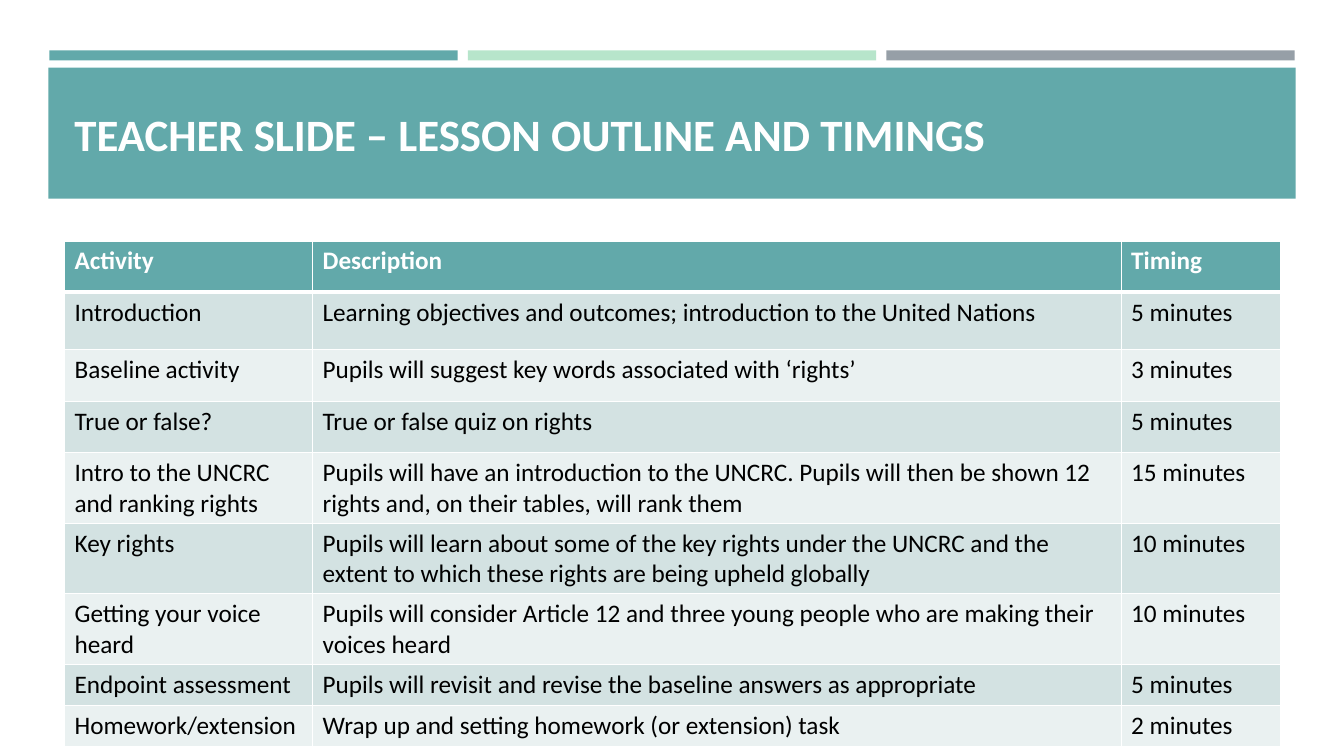
import pptx
import pptx.util
import pptx.dml.color
import pptx.enum.shapes
import pptx.enum.text
import pptx.oxml
import pptx.oxml.ns

Inches = pptx.util.Inches
Pt = pptx.util.Pt
RGB = pptx.dml.color.RGBColor

TEAL = RGB(0x62, 0xA9, 0xAA)
MINT = RGB(0xB7, 0xE5, 0xCB)
GREY = RGB(0x96, 0x9F, 0xA7)
DARK = RGB(0xD3, 0xE2, 0xE2)
PALE = RGB(0xEA, 0xF1, 0xF1)
WHITE = RGB(0xFF, 0xFF, 0xFF)
BLACK = RGB(0, 0, 0)

HEAD = ("Activity", "Description", "Timing")
PLAN = [
    ("Introduction", "Learning objectives and outcomes; introduction to the United Nations", "5 minutes"),
    ("Baseline activity", "Pupils will suggest key words associated with ‘rights’", "3 minutes"),
    ("True or false?", "True or false quiz on rights", "5 minutes"),
    ("Intro to the UNCRC and ranking rights",
     "Pupils will have an introduction to the UNCRC. Pupils will then be shown 12 rights and, "
     "on their tables, will rank them", "15 minutes"),
    ("Key rights",
     "Pupils will learn about some of the key rights under the UNCRC and the extent to which "
     "these rights are being upheld globally", "10 minutes"),
    ("Getting your voice heard",
     "Pupils will consider Article 12 and three young people who are making their voices heard",
     "10 minutes"),
    ("Endpoint assessment", "Pupils will revisit and revise the baseline answers as appropriate", "5 minutes"),
    ("Homework/extension", "Wrap up and setting homework (or extension) task", "2 minutes"),
]
WIDTHS = (2.46, 8.02, 1.58)
HEIGHTS = (0.51, 0.57) + (0.51,) * 5 + (0.41,) * 2


class Deck:
    """Holds the text style and the current slide."""

    def __init__(self, font):
        self.font = font
        self.prs = pptx.Presentation()
        self.prs.slide_width = Inches(13.33)
        self.prs.slide_height = Inches(7.5)
        self.slide = self.prs.slides.add_slide(self.prs.slide_layouts[6])

    def bar(self, left, top, width, height, color):
        kind = pptx.enum.shapes.MSO_SHAPE.RECTANGLE
        shape = self.slide.shapes.add_shape(
            kind, Inches(left), Inches(top), Inches(width), Inches(height))
        shape.shadow.inherit = False
        shape.fill.solid()
        shape.fill.fore_color.rgb = color
        shape.line.fill.background()

    def label(self, frame, text, size, color, bold):
        run = frame.paragraphs[0].add_run()
        run.text = text
        run.font.name = self.font
        run.font.size = Pt(size)
        run.font.color.rgb = color
        run.font.bold = bold

    def title(self, left, top, width, height, text):
        box = self.slide.shapes.add_textbox(
            Inches(left), Inches(top), Inches(width), Inches(height))
        frame = box.text_frame
        frame.word_wrap = True
        frame.vertical_anchor = pptx.enum.text.MSO_ANCHOR.MIDDLE
        self.label(frame, text, 32, WHITE, True)

    def edge(self, cell, side, width):
        space = pptx.oxml.ns.nsdecls("a")
        line = pptx.oxml.parse_xml(
            f'<a:ln{side} {space} w="{Pt(width)}"><a:solidFill>'
            f'<a:srgbClr val="{WHITE}"/></a:solidFill></a:ln{side}>')
        cell._tc.get_or_add_tcPr().append(line)

    def cell(self, cell, row, text):
        first = row == 0
        for side in "LRTB":
            thick = (row, side) in ((0, "B"), (1, "T"))
            self.edge(cell, side, 3 if thick else 1)
        cell.fill.solid()
        cell.fill.fore_color.rgb = TEAL if first else DARK if row % 2 else PALE
        self.label(cell.text_frame, text, 18, WHITE if first else BLACK, first)

    def table(self, left, top, widths, heights, rows):
        frame = self.slide.shapes.add_table(
            len(rows), len(widths), Inches(left), Inches(top),
            Inches(sum(widths)), Inches(sum(heights)))
        grid = frame.table
        for col, width in zip(grid.columns, widths):
            col.width = Inches(width)
        for i, (height, texts) in enumerate(zip(heights, rows)):
            grid.rows[i].height = Inches(height)
            for j, text in enumerate(texts):
                self.cell(grid.cell(i, j), i, text)


def main():
    deck = Deck("Calibri")
    for i, color in enumerate((TEAL, MINT, GREY)):
        deck.bar(0.49 + 4.15 * i, 0.5, 4.05, 0.1, color)
    deck.bar(0.48, 0.67, 12.37, 1.3, TEAL)
    deck.title(0.64, 0.77, 12.06, 1.11, "TEACHER SLIDE – LESSON OUTLINE AND TIMINGS")
    deck.table(0.64, 2.39, WIDTHS, HEIGHTS, [HEAD] + PLAN)
    deck.prs.save("out.pptx")


if __name__ == "__main__":
    main()
